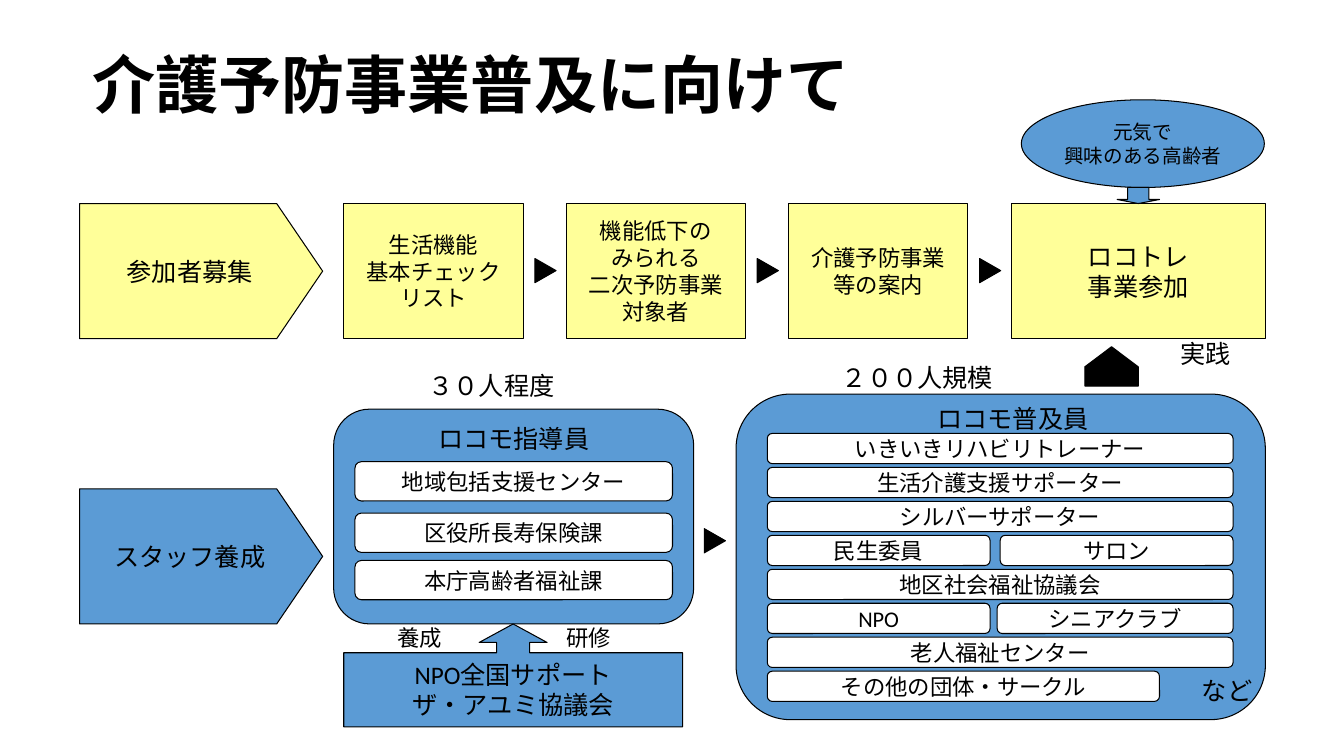
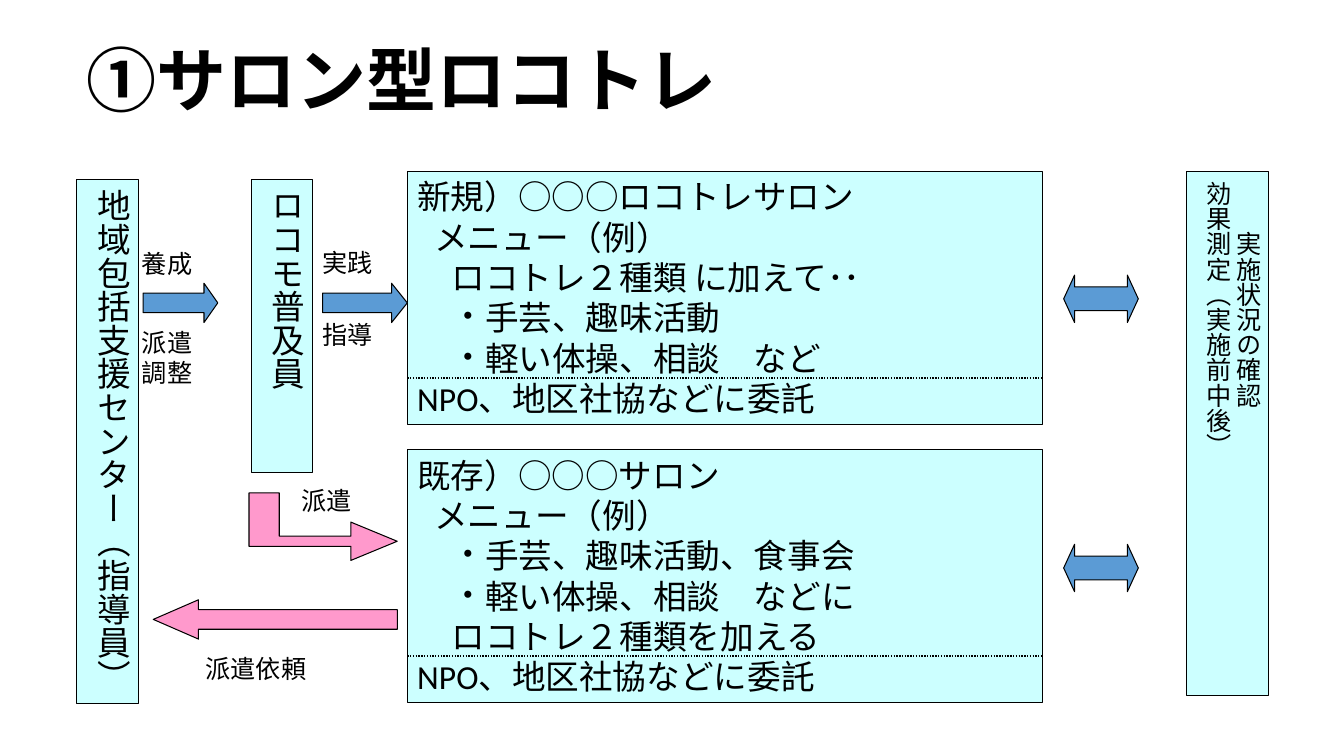
from lxml import etree
from pptx import Presentation
from pptx.dml.color import RGBColor
from pptx.enum.dml import MSO_LINE
from pptx.enum.shapes import MSO_CONNECTOR, MSO_SHAPE
from pptx.enum.text import MSO_ANCHOR, MSO_AUTO_SIZE, PP_ALIGN
from pptx.oxml.ns import qn
from pptx.util import Inches, Pt

BLACK = RGBColor(0x00, 0x00, 0x00)
WHITE = RGBColor(0xFF, 0xFF, 0xFF)
BLUE = RGBColor(0x5B, 0x9B, 0xD5)
YELLOW = RGBColor(0xFF, 0xFF, 0x99)
AQUA = RGBColor(0xCC, 0xFF, 0xFF)
PINK = RGBColor(0xFF, 0x99, 0xCC)
FONT = "Calibri"

LEFT, CENTER = PP_ALIGN.LEFT, PP_ALIGN.CENTER
TOP, MIDDLE = MSO_ANCHOR.TOP, MSO_ANCHOR.MIDDLE
RECT, ROUND = MSO_SHAPE.RECTANGLE, MSO_SHAPE.ROUNDED_RECTANGLE
PLATE, TRI = MSO_SHAPE.PENTAGON, MSO_SHAPE.ISOSCELES_TRIANGLE
OVAL, SOFT = MSO_SHAPE.OVAL, MSO_SHAPE.FLOWCHART_ALTERNATE_PROCESS
DOWN, CALL = MSO_SHAPE.DOWN_ARROW, MSO_SHAPE.UP_ARROW_CALLOUT
RIGHT, BACK = MSO_SHAPE.RIGHT_ARROW, MSO_SHAPE.LEFT_ARROW
BOTH = MSO_SHAPE.LEFT_RIGHT_ARROW

deck = Presentation()
deck.slide_width, deck.slide_height = Inches(13.33), Inches(7.5)
# The grid has 133.3 columns and 75 rows, with square cells.
CELL = deck.slide_height / 75


def write(frame, text, size=18, align=CENTER, anchor=MIDDLE, inset=None,
          wrap=False, bold=False, lead=None, tall=False):
    """Fill a text frame, one paragraph a line; tall text runs downwards."""
    frame.auto_size = MSO_AUTO_SIZE.SHAPE_TO_FIT_TEXT if tall else MSO_AUTO_SIZE.NONE
    frame.word_wrap, frame.vertical_anchor = wrap, anchor
    if tall:
        frame._txBody.bodyPr.set("vert", "eaVert")
    if inset is not None:
        frame.margin_left = frame.margin_right = inset
        frame.margin_top = frame.margin_bottom = inset
    frame.text = text
    for para in frame.paragraphs:
        para.alignment, para.line_spacing = align, lead
        for run in para.runs:
            run.font.name, run.font.size = FONT, Pt(size)
            run.font.bold, run.font.color.rgb = bold, BLACK


def draw(shapes, kind, at, fill=None, text="", adj=(), turn=0, **form):
    """Add a shape, or a text box if kind is None, at grid columns and rows."""
    spot = [round(n * CELL) for n in at]
    if kind is None:
        shape = shapes.add_textbox(*spot)
    else:
        shape = shapes.add_shape(kind, *spot)
        shape.shadow.inherit = False
        shape.fill.solid()
        shape.fill.fore_color.rgb = fill
        shape.line.color.rgb, shape.line.width = BLACK, Pt(0.75)
        for i, part in enumerate(adj):
            shape.adjustments[i] = part
        shape.rotation = turn
    if text:
        write(shape.text_frame, text, **form)
    return shape


pages = []
for text, size, at in [("介護予防事業普及に向けて", 45, (8.2, 3.6, 81.3, 10.2)),
                       ("①サロン型ロコトレ", 50, (7.6, 3.6, 105.1, 9.4))]:
    slide = deck.slides.add_slide(deck.slide_layouts[5])
    title = slide.shapes.title
    title.left, title.top, title.width, title.height = [round(n * CELL) for n in at]
    write(title.text_frame, text, size=size, align=LEFT, wrap=True, bold=True, lead=0.9)
    pages.append(slide.shapes)
plan, salon = pages

# Slide 1: recruiting in the upper row, staff training in the lower one
for top, fill, text in [(20.2, YELLOW, "参加者募集"), (48.5, BLUE, "スタッフ養成")]:
    draw(plan, PLATE, (7.9, top, 24.1, 13.4), fill, text, adj=[0.34])

STEP = 22.05
steps = ["生活機能\n基本チェック\nリスト",
         "機能低下の\nみられる\n二次予防事業\n対象者",
         "介護予防事業\n等の案内"]
for i, text in enumerate(steps):
    left = 34.1 + i * STEP
    draw(plan, RECT, (left, 20.2, 17.8, 13.4), YELLOW, text, size=16)
    draw(plan, TRI, (left + 18.8, 25.8, 2.4, 2.1), BLACK, turn=90)
draw(plan, RECT, (100.3, 20.2, 25.2, 13.4), YELLOW, "ロコトレ\n事業参加")
draw(plan, OVAL, (101.3, 9.9, 24.1, 8.7), BLUE, "元気で\n興味のある高齢者", size=14)
draw(plan, DOWN, (110.8, 18.6, 4.2, 1.6), BLUE, adj=[0.5, 0.25])

draw(plan, ROUND, (33.1, 40.6, 35.7, 21.3), BLUE)
draw(plan, ROUND, (73, 39.1, 52.5, 32.3), BLUE)
draw(plan, TRI, (69.7, 52.6, 2.4, 2.1), BLACK, turn=90)
draw(plan, PLATE, (108.3, 33.7, 3.9, 5.3), BLACK, adj=[0.51], turn=270)

for top, text in [(45.8, "地域包括支援センター"), (50.9, "区役所長寿保険課"),
                  (55.6, "本庁高齢者福祉課")]:
    draw(plan, SOFT, (35.2, top, 31.5, 3.9), WHITE, text, size=16)
draw(plan, CALL, (34.1, 61.9, 33.6, 10.2), BLUE, "NPO全国サポート\nザ・アユミ協議会",
     adj=[0.32, 0.33, 0.18, 0.72])

# Each bar: text, left, width
START, FULL, HALF = 76.1, 46.2, 22.1
bars = [[("いきいきリハビリトレーナー", START, FULL)],
        [("生活介護支援サポーター", START, FULL)],
        [("シルバーサポーター", START, FULL)],
        [("民生委員", START, HALF), ("サロン", 99.2, 23.1)],
        [("地区社会福祉協議会", START, FULL)],
        [("NPO", START, HALF), ("シニアクラブ", 98.9, 23.4)],
        [("老人福祉センター", START, FULL)],
        [("その他の団体・サークル", START, 38.9)]]
for i, row in enumerate(bars):
    for text, left, width in row:
        draw(plan, ROUND, (left, 43 + i * 3.37, width, 3), WHITE, text, size=16)

for text, at, size, align in [
        ("ロコモ指導員", (33.1, 42, 35.7, 3), 18, CENTER),
        ("ロコモ普及員", (74.2, 40, 52.5, 3), 18, CENTER),
        ("など", (119.2, 67, 6, 3), 18, LEFT),
        ("養成", (39.4, 61.9, 6.3, 2.7), 16, LEFT),
        ("研修", (56.2, 61.9, 6.3, 2.7), 16, LEFT),
        ("３０人程度", (42.5, 36.7, 16.8, 3), 18, LEFT),
        ("２００人規模", (83.5, 35.9, 21, 3), 18, LEFT),
        ("実践", (117.1, 33.6, 9.4, 3), 18, LEFT)]:
    draw(plan, None, at, text=text, size=size, align=align, anchor=TOP, inset=0, wrap=True)

# Slide 2: staff on the left, salons in the middle, checks on the right
for at, text, size, align in [
        ((7.6, 17.8, 6.1, 52), "地域包括支援センター（指導員）", 24, LEFT),
        ((24.9, 17.8, 6.1, 29.1), "ロコモ普及員", 24, LEFT),
        ((117.7, 17, 8.1, 52), "実施状況の確認\v効果測定（実施前中後）", 18, CENTER)]:
    draw(salon, RECT, at, AQUA, text, size=size, align=align, anchor=TOP, wrap=True, tall=True)

# Each line: text, indent in cells, bullet
menus = [(17, [("新規）○○○ロコトレサロン", 0, False),
               ("メニュー（例）", 1.7, False),
               ("ロコトレ２種類 に加えて･･", 3.4, False),
               ("手芸、趣味活動", 4.6, True),
               ("軽い体操、相談　など", 4.6, True),
               ("NPO、地区社協などに委託", 0, False)]),
         (44.6, [("既存）○○○サロン", 0, False),
                 ("メニュー（例）", 1.7, False),
                 ("手芸、趣味活動、食事会", 4.6, True),
                 ("軽い体操、相談　などに", 4.6, True),
                 ("ロコトレ２種類を加える", 3.4, False),
                 ("NPO、地区社協などに委託", 0, False)])]
for top, lines in menus:
    box = draw(salon, RECT, (40.4, top, 63, 25.1), AQUA, "\n".join(l[0] for l in lines),
               size=24, align=LEFT, anchor=TOP, wrap=True)
    for para, (text, dent, dot) in zip(box.text_frame.paragraphs, lines):
        prop = para._p.get_or_add_pPr()
        prop.set("marL", str(round(dent * CELL)))
        if dot:
            prop.set("indent", str(round(-1.2 * CELL)))
            etree.SubElement(prop, qn("a:buFont")).set("typeface", FONT)
            etree.SubElement(prop, qn("a:buChar")).set("char", "・")
    ends = [round(n * CELL) for n in (40.4, top + 20.5, 103.4, top + 20.5)]
    rule = salon.add_connector(MSO_CONNECTOR.STRAIGHT, *ends)
    rule.line.color.rgb, rule.line.width = BLACK, Pt(1)
    rule.line.dash_style = MSO_LINE.ROUND_DOT
    etree.SubElement(rule._element.spPr, qn("a:effectLst"))

for kind, at, fill, adj in [
        (RIGHT, (14.2, 28.1, 7.4, 3.9), BLUE, [0.5, 0.35]),
        (RIGHT, (32, 28.1, 8.4, 3.9), BLUE, [0.5, 0.4]),
        (BOTH, (105.5, 27.3, 7.4, 4.7), BLUE, [0.5, 0.23]),
        (BOTH, (105.5, 54, 7.4, 4.7), BLUE, [0.5, 0.23]),
        (BACK, (15.2, 59.5, 24.2, 3.9), PINK, [0.5, 1.15])]:
    draw(salon, kind, at, fill, adj=adj)

bend = [(39.4, 53.7), (34.8, 51.8), (34.8, 53.2), (27.7, 53.2), (27.7, 48.9),
        (24.7, 48.9), (24.7, 54.2), (34.8, 54.2), (34.8, 55.6)]
dots = [(round(x * CELL), round(y * CELL)) for x, y in bend]
pen = salon.build_freeform(*dots[0])
pen.add_line_segments(dots[1:], close=True)
hook = pen.convert_to_shape()
hook.shadow.inherit = False
hook.fill.solid()
hook.fill.fore_color.rgb = PINK
hook.line.color.rgb, hook.line.width = BLACK, Pt(0.75)

for text, left, top, width, height in [
        ("養成", 13.1, 24.1, 9.4, 4), ("派遣\n調整", 13.1, 32, 9.4, 7),
        ("実践", 31, 24, 9.4, 4), ("指導", 31, 31.2, 9.4, 4),
        ("派遣", 28.9, 47.7, 9.4, 4), ("派遣依頼", 19.4, 64.3, 16.8, 4)]:
    draw(salon, None, (left, top, width, height), text=text, align=LEFT, anchor=TOP, wrap=True)

deck.save("out.pptx")
